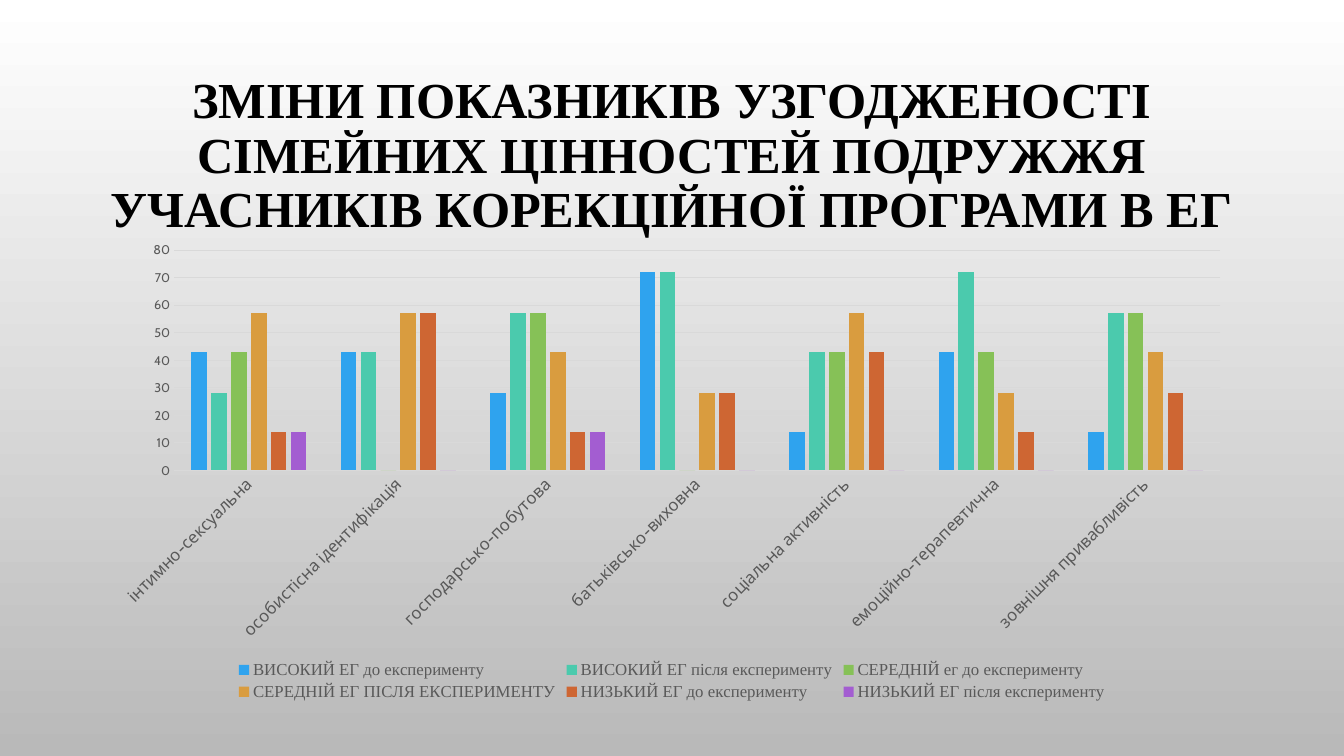
import pptx
import pptx.chart.data
import pptx.dml.color
import pptx.enum.chart
import pptx.enum.text
import pptx.util
from lxml import etree

Cm = pptx.util.Cm
Pt = pptx.util.Pt
RGBColor = pptx.dml.color.RGBColor

WHITE = RGBColor(0xFF, 0xFF, 0xFF)
BLACK = RGBColor(0x00, 0x00, 0x00)
BACKGROUND_GRAY = RGBColor(0xB9, 0xB9, 0xB9)
LABEL_GRAY = RGBColor(0x59, 0x59, 0x59)
LINE_GRAY = RGBColor(0xD9, 0xD9, 0xD9)
BLUE = RGBColor(0x2F, 0xA3, 0xEE)
TEAL = RGBColor(0x4B, 0xCA, 0xAD)
GREEN = RGBColor(0x86, 0xC1, 0x57)
AMBER = RGBColor(0xD9, 0x9C, 0x3F)
ORANGE = RGBColor(0xCE, 0x66, 0x33)
PURPLE = RGBColor(0xA3, 0x5D, 0xD1)

HEADING_FONT = "Times New Roman"
CHART_FONT = "Cabin"

TITLE = ("ЗМІНИ ПОКАЗНИКІВ УЗГОДЖЕНОСТІ СІМЕЙНИХ ЦІННОСТЕЙ ПОДРУЖЖЯ "
         "УЧАСНИКІВ КОРЕКЦІЙНОЇ ПРОГРАМИ В ЕГ")
FAMILY_VALUES = [
    "інтимно-сексуальна",
    "особистісна ідентифікація",
    "господарсько-побутова",
    "батьківсько-виховна",
    "соціальна активність",
    "емоційно-терапевтична",
    "зовнішня привабливість",
]
LEVELS = [
    ("ВИСОКИЙ ЕГ до експерименту", BLUE, (43, 43, 28, 72, 14, 43, 14)),
    ("ВИСОКИЙ ЕГ після експерименту", TEAL, (28, 43, 57, 72, 43, 72, 57)),
    ("СЕРЕДНІЙ ег до експерименту", GREEN, (43, 0, 57, 0, 43, 43, 57)),
    ("СЕРЕДНІЙ ЕГ ПІСЛЯ ЕКСПЕРИМЕНТУ", AMBER, (57, 57, 43, 28, 57, 28, 43)),
    ("НИЗЬКИЙ ЕГ до експерименту", ORANGE, (14, 57, 14, 28, 43, 14, 28)),
    ("НИЗЬКИЙ ЕГ після експерименту", PURPLE, (14, 0, 14, 0, 0, 0, 0)),
]


def style_font(font, name, size, color, bold=False):
    font.name = name
    font.size = Pt(size)
    font.color.rgb = color
    font.bold = bold


def paint_background(slide):
    fill = slide.background.fill
    fill.gradient()
    fill.gradient_angle = 270
    for stop, color in zip(fill.gradient_stops, (WHITE, BACKGROUND_GRAY)):
        stop.color.rgb = color


def add_title(slide, left, top, width, height):
    text_frame = slide.shapes.add_textbox(left, top, width, height).text_frame
    text_frame.word_wrap = True
    text_frame.vertical_anchor = pptx.enum.text.MSO_ANCHOR.MIDDLE
    paragraph = text_frame.paragraphs[0]
    paragraph.text = TITLE
    paragraph.alignment = pptx.enum.text.PP_ALIGN.CENTER
    paragraph.line_spacing = 0.9
    style_font(paragraph.font, HEADING_FONT, 36, BLACK, bold=True)


def style_axes(chart):
    category_axis, value_axis = chart.category_axis, chart.value_axis
    for axis, size in ((category_axis, 12), (value_axis, 9)):
        axis.major_tick_mark = pptx.enum.chart.XL_TICK_MARK.NONE
        axis.minor_tick_mark = pptx.enum.chart.XL_TICK_MARK.NONE
        style_font(axis.tick_labels.font, CHART_FONT, size, LABEL_GRAY)
    value_axis.minimum_scale, value_axis.maximum_scale = 0, 80
    value_axis.major_unit = 10
    value_axis.format.line.fill.background()
    for line in (category_axis.format.line, value_axis.major_gridlines.format.line):
        line.color.rgb = LINE_GRAY
        line.width = Pt(0.75)
    # Slant the category labels upwards by 45 degrees
    namespace = "{http://schemas.openxmlformats.org/drawingml/2006/main}"
    body = next(category_axis.tick_labels.font._element.getparent().getparent()
                .getparent().iter(etree.QName(namespace + "bodyPr").text))
    body.set("rot", "-2700000")
    body.set("vert", "horz")


def add_level_chart(slide, left, top, width, height):
    data = pptx.chart.data.CategoryChartData()
    data.categories = FAMILY_VALUES
    for name, _, values in LEVELS:
        data.add_series(name, values)
    chart = slide.shapes.add_chart(
        pptx.enum.chart.XL_CHART_TYPE.COLUMN_CLUSTERED,
        left, top, width, height, data).chart
    chart.has_title = False
    style_font(chart.font, CHART_FONT, 10, BLACK)

    # Columns
    plot = chart.plots[0]
    plot.vary_by_categories = False
    plot.gap_width = 219
    plot.overlap = -27
    for series, (_, color, _) in zip(plot.series, LEVELS):
        series.format.fill.solid()
        series.format.fill.fore_color.rgb = color
    style_axes(chart)

    # Legend
    chart.has_legend = True
    chart.legend.position = pptx.enum.chart.XL_LEGEND_POSITION.BOTTOM
    chart.legend.include_in_layout = False
    style_font(chart.legend.font, HEADING_FONT, 12, LABEL_GRAY)


def main():
    presentation = pptx.Presentation()
    presentation.slide_width = Cm(33.87)
    presentation.slide_height = Cm(19.05)
    slide = presentation.slides.add_slide(presentation.slide_layouts[6])
    margin = Cm(2.54)
    content_width = presentation.slide_width - 2 * margin
    paint_background(slide)
    add_title(slide, margin, Cm(1.73), content_width, Cm(4.45))
    add_level_chart(slide, margin, Cm(5.87), content_width, Cm(11.89))
    presentation.save("out.pptx")


if __name__ == "__main__":
    main()
